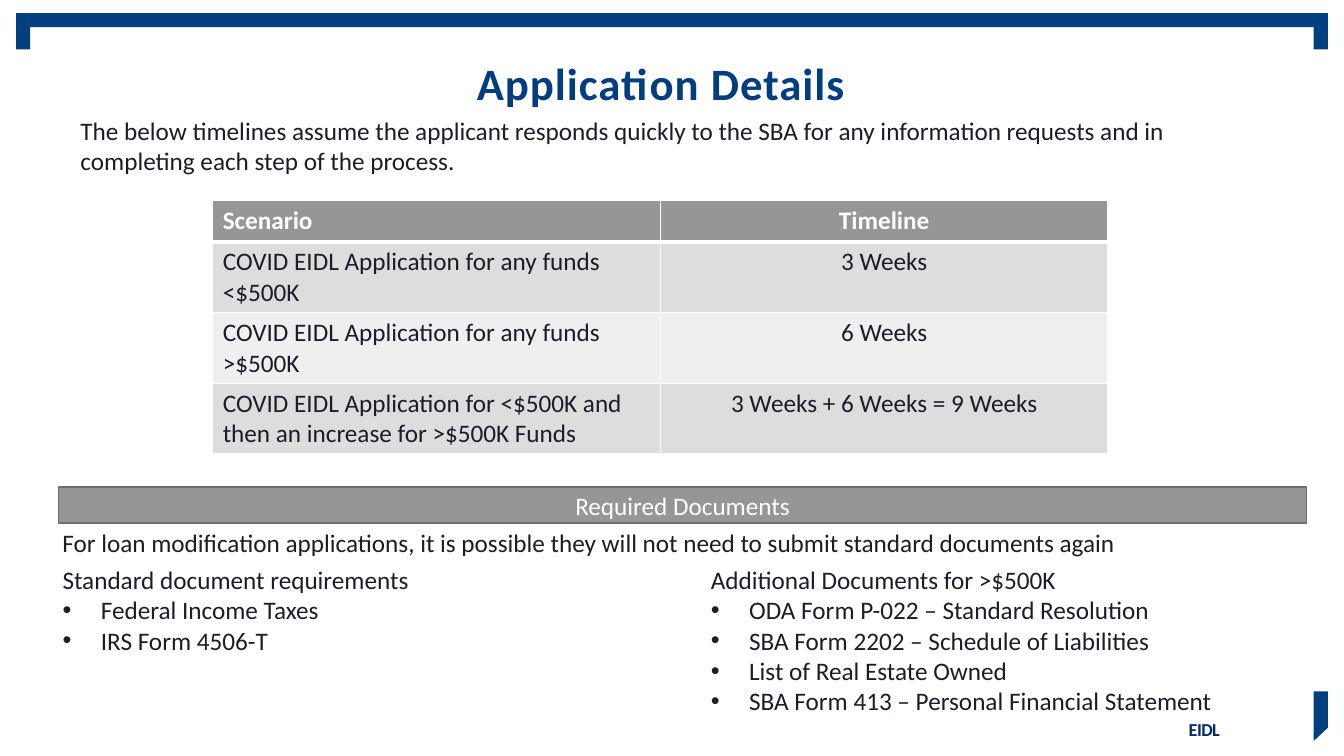
from dataclasses import dataclass

from lxml import etree
from pptx import Presentation
from pptx import util as u
from pptx.dml.color import RGBColor
from pptx.enum import shapes, text
from pptx.oxml.ns import qn

PX = 9144  # 100 px to the inch


@dataclass(frozen=True)
class Theme:
    font: str = "Calibri"
    navy: str = "003F80"
    title: str = "003E80"
    tag: str = "002D6C"
    ink: str = "1B1E29"
    white: str = "FFFFFF"
    grey: str = "969696"
    edge: str = "6F6F6F"
    bands: tuple = ("DDDDDD", "EFEFEF")
    title_size: int = 32
    body_size: int = 18
    tag_size: int = 13


T = Theme()
ROWS = [
    ("COVID EIDL Application for any funds <$500K", "3 Weeks"),
    ("COVID EIDL Application for any funds >$500K", "6 Weeks"),
    ("COVID EIDL Application for <$500K and then an increase for >$500K Funds",
     "3 Weeks + 6 Weeks = 9 Weeks"),
]
STANDARD = ["Federal Income Taxes", "IRS Form 4506-T"]
ADDITIONAL = [
    "ODA Form P-022 – Standard Resolution",
    "SBA Form 2202 – Schedule of Liabilities",
    "List of Real Estate Owned",
    "SBA Form 413 – Personal Financial Statement",
]


def px(*values):
    return [u.Emu(v * PX) for v in values]


def apply(obj, **values):
    for name, value in values.items():
        setattr(obj, name, value)


def place(sp, box):
    apply(sp, **dict(zip(("left", "top", "width", "height"), px(*box))))


def fill(obj, color):
    obj.fill.solid()
    obj.fill.fore_color.rgb = RGBColor.from_string(color)


def write(p, words, size=T.body_size, color=T.ink, bold=False, align=None, spacing=0):
    """Put one run in a paragraph; spacing is in hundredths of a point."""
    r = p.add_run()
    r.text = words
    apply(p, alignment=align, space_before=u.Pt(0))
    apply(r.font, name=T.font, size=u.Pt(size), bold=bold)
    r.font.color.rgb = RGBColor.from_string(color)
    if spacing:
        r.font._element.set("spc", str(spacing))


def flush(tf):
    apply(tf, margin_left=0, margin_top=0, margin_right=0, margin_bottom=0,
          word_wrap=True, vertical_anchor=text.MSO_ANCHOR.TOP,
          auto_size=text.MSO_AUTO_SIZE.NONE)


def add_text(s, box, words, **style):
    tf = s.shapes.add_textbox(*px(*box)).text_frame
    tf.word_wrap = True
    write(tf.paragraphs[0], words, **style)
    return tf


def add_bar(s, box, color):
    sp = s.shapes.add_shape(shapes.MSO_SHAPE.RECTANGLE, *px(*box))
    sp.shadow.inherit = False
    fill(sp, color)
    sp.line.fill.background()
    return sp


def add_frame(s):
    for box in ((16, 13, 14, 36), (1303, 13, 14, 36), (16, 13, 1301, 14)):
        add_bar(s, box, T.navy)
    pen = s.shapes.build_freeform(1303, 686, scale=PX)
    pen.add_line_segments([(1317, 686), (1317, 722), (1303, 735)], close=True)
    sp = pen.convert_to_shape()
    sp.shadow.inherit = False
    fill(sp, T.navy)
    sp.line.fill.background()


def add_title(s, words):
    sp = s.shapes.title
    place(sp, (132, 55, 1047, 55))
    flush(sp.text_frame)
    write(sp.text_frame.paragraphs[0], words, T.title_size, T.title, True,
          text.PP_ALIGN.CENTER, 70)


def fill_list(sp, box, heading, items):
    """Fill a body placeholder with a plain heading and bulleted items."""
    place(sp, box)
    tf = sp.text_frame
    apply(tf, word_wrap=True, auto_size=text.MSO_AUTO_SIZE.NONE)
    for i, words in enumerate([heading, *items]):
        p = tf.add_paragraph() if i else tf.paragraphs[0]
        pPr = p._p.get_or_add_pPr()
        indent = 38 * PX if i else 0
        pPr.set("marL", str(indent))
        pPr.set("indent", str(-indent))
        if i:
            etree.SubElement(pPr, qn("a:buFont")).set("typeface", "Arial")
            etree.SubElement(pPr, qn("a:buChar")).set("char", "•")
        else:
            etree.SubElement(pPr, qn("a:buNone"))
        write(p, words)


def set_borders(cell, **widths):
    """Draw white cell borders; widths maps L, R, T and B to points."""
    tcPr = cell._tc.get_or_add_tcPr()
    for i, (side, width) in enumerate(widths.items()):
        ln = etree.Element(qn(f"a:ln{side}"), w=str(u.Pt(width)))
        paint = etree.SubElement(ln, qn("a:solidFill"))
        etree.SubElement(paint, qn("a:srgbClr")).set("val", T.white)
        tcPr.insert(i, ln)


def add_timeline(s, box):
    rows = [("Scenario", "Timeline"), *ROWS]
    table = s.shapes.add_table(len(rows), 2, *px(*box)).table
    for i, row in enumerate(rows):
        table.rows[i].height = px(70 if i else 41)[0]
        for j, words in enumerate(row):
            cell = table.cell(i, j)
            fill(cell, T.bands[(i - 1) % 2] if i else T.grey)
            set_borders(cell, L=1, R=1, T=3 if i == 1 else 1, B=1 if i else 3)
            write(cell.text_frame.paragraphs[0], words,
                  color=T.ink if i else T.white, bold=not i,
                  align=text.PP_ALIGN.CENTER if j else text.PP_ALIGN.LEFT)


def add_banner(s, box, words):
    sp = add_bar(s, box, T.grey)
    fill(sp.line, T.edge)
    sp.line.width = u.Pt(1)
    sp.text_frame.vertical_anchor = text.MSO_ANCHOR.MIDDLE
    write(sp.text_frame.paragraphs[0], words, color=T.white,
          align=text.PP_ALIGN.CENTER)


def main():
    prs = Presentation()
    apply(prs, slide_width=u.Inches(13.33), slide_height=u.Inches(7.5))
    s = prs.slides.add_slide(prs.slide_layouts[3])
    add_frame(s)
    add_title(s, "Application Details")
    add_text(s, (70, 109, 1193, 71),
             "The below timelines assume the applicant responds quickly to the SBA "
             "for any information requests and in completing each step of the process.")
    add_timeline(s, (211, 199, 888, 251))
    add_banner(s, (58, 483, 1238, 36), "Required Documents")
    add_text(s, (52, 518, 1244, 40),
             "For loan modification applications, it is possible they will not need "
             "to submit standard documents again")
    left, right = s.placeholders[1], s.placeholders[2]
    fill_list(left, (52, 555, 638, 101), "Standard document requirements", STANDARD)
    fill_list(right, (695, 555, 638, 162), "Additional Documents for >$500K", ADDITIONAL)
    tag = add_text(s, (1179, 713, 93, 23), "EIDL", size=T.tag_size, color=T.tag,
                   bold=True, spacing=-40)
    flush(tag)
    tag.paragraphs[0].line_spacing = u.Pt(15.3)
    prs.save("out.pptx")


if __name__ == "__main__":
    main()
